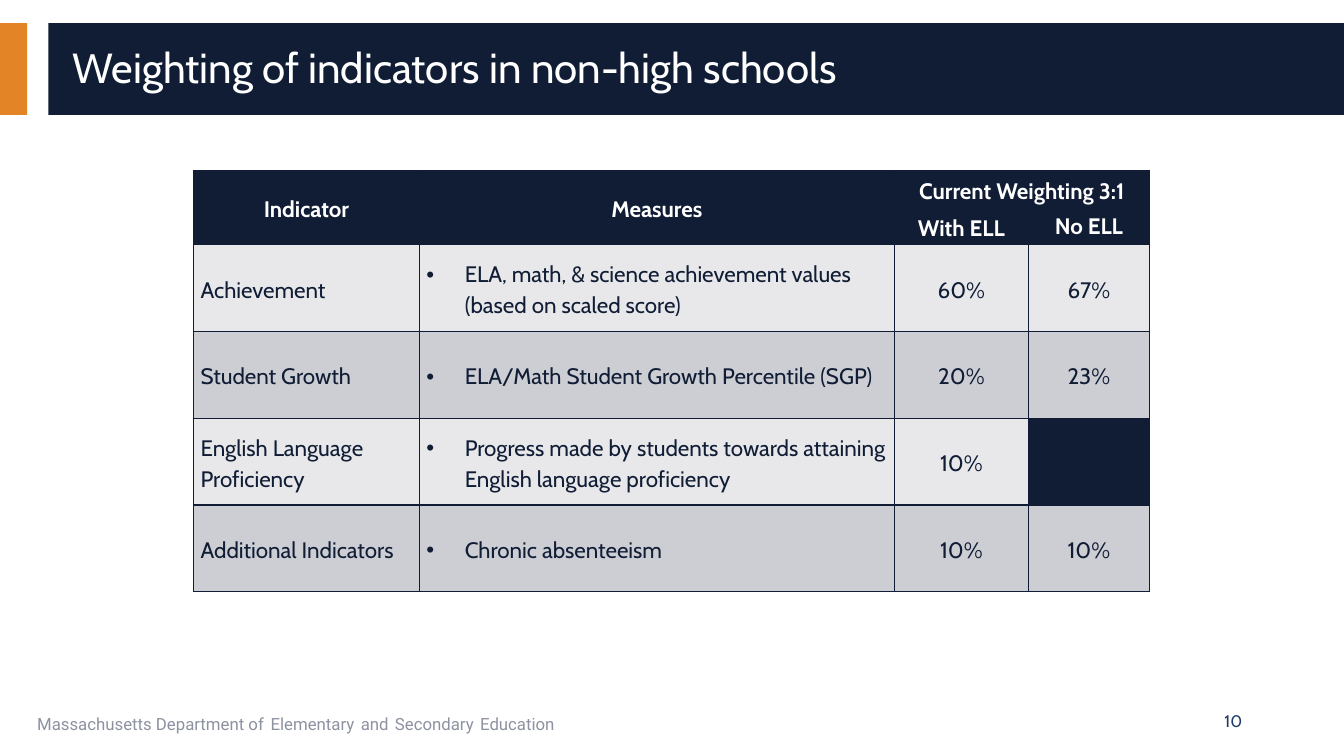
from typing import NamedTuple

import pptx
import pptx.dml.color
import pptx.enum.shapes
import pptx.enum.text
import pptx.oxml.ns
import pptx.util
from lxml import etree

Inches = pptx.util.Inches
Pt = pptx.util.Pt
RGBColor = pptx.dml.color.RGBColor
PP_ALIGN = pptx.enum.text.PP_ALIGN
MSO_ANCHOR = pptx.enum.text.MSO_ANCHOR
qn = pptx.oxml.ns.qn

NAVY = RGBColor(0x10, 0x1D, 0x35)
ORANGE = RGBColor(0xE3, 0x85, 0x26)
BLUE = RGBColor(0x20, 0x3B, 0x6A)
GRAY = RGBColor(0x8D, 0x92, 0xA1)
WHITE = RGBColor(0xFF, 0xFF, 0xFF)
BANDS = (RGBColor(0xE8, 0xE8, 0xEB), RGBColor(0xCD, 0xCE, 0xD4))

COLUMN_WIDTHS = (2.24, 4.71, 1.33, 1.2)
HEADER_HEIGHT, BODY_HEIGHT = 0.37, 0.86
HEADER_ROWS = 2


class Bar(NamedTuple):
    left: float
    width: float
    color: RGBColor


class Indicator(NamedTuple):
    name: str
    measure: str
    with_ell: str
    no_ell: str


BARS = (Bar(0, 0.27, ORANGE), Bar(0.48, 12.86, NAVY))
HEADERS = (
    ("Indicator", "Measures", "Current Weighting 3:1", ""),
    ("", "", "With ELL", "No ELL"),
)
INDICATORS = (
    Indicator("Achievement",
              "ELA, math, & science achievement values (based on scaled score)",
              "60%", "67%"),
    Indicator("Student Growth", "ELA/Math Student Growth Percentile (SGP)",
              "20%", "23%"),
    Indicator("English Language\nProficiency",
              "Progress made by students towards attaining English language proficiency",
              "10%", ""),
    Indicator("Additional Indicators", "Chronic absenteeism", "10%", "10%"),
)


def format_font(font, name: str, size: float, color: RGBColor, bold: bool = False) -> None:
    font.name = name
    font.size = Pt(size)
    font.bold = bold
    font.color.rgb = color


def add_bar(slide, bar: Bar) -> None:
    shape = slide.shapes.add_shape(
        pptx.enum.shapes.MSO_SHAPE.RECTANGLE,
        Inches(bar.left), Inches(0.23), Inches(bar.width), Inches(0.91))
    shape.shadow.inherit = False
    shape.fill.solid()
    shape.fill.fore_color.rgb = bar.color
    shape.line.fill.background()


def add_title(slide, text: str) -> None:
    title = slide.shapes.title
    title.left, title.top = Inches(0.62), Inches(0.32)
    title.width, title.height = Inches(12.44), Inches(0.74)
    title.text_frame.text = text
    title.text_frame.vertical_anchor = MSO_ANCHOR.MIDDLE
    paragraph = title.text_frame.paragraphs[0]
    paragraph.alignment = PP_ALIGN.LEFT
    paragraph.line_spacing = 0.9
    format_font(paragraph.runs[0].font, "Cabin", 30, WHITE)


def add_footer(slide) -> None:
    footer = slide.shapes.add_textbox(Inches(0.27), Inches(6.95), Inches(8.44), Inches(0.4))
    footer.text_frame.word_wrap = True
    paragraph = footer.text_frame.paragraphs[0]
    # The gaps between the later words are set larger than the words
    phrases = ("Massachusetts Department of", "Elementary", "and", "Secondary", "Education")
    for index, phrase in enumerate(phrases):
        if index:
            gap = paragraph.add_run()
            gap.text = " "
            format_font(gap.font, "Roboto", 18, BLUE)
        run = paragraph.add_run()
        run.text = phrase
        format_font(run.font, "Roboto", 12, GRAY)


def add_slide_number(slide, number: str) -> None:
    box = slide.shapes.add_textbox(Inches(9.42), Inches(6.95), Inches(3), Inches(0.4))
    box.text_frame.word_wrap = True
    box.text_frame.vertical_anchor = MSO_ANCHOR.MIDDLE
    box.text_frame.text = number
    paragraph = box.text_frame.paragraphs[0]
    paragraph.alignment = PP_ALIGN.RIGHT
    format_font(paragraph.runs[0].font, "Cabin", 12, BLUE)


def add_bullet(paragraph) -> None:
    properties = paragraph._p.get_or_add_pPr()
    properties.set("marL", str(Inches(0.38)))
    properties.set("indent", str(-Inches(0.38)))
    etree.SubElement(properties, qn("a:buFont"), typeface="Arial")
    etree.SubElement(properties, qn("a:buChar"), char="•")


def style_cell(cell, fill: RGBColor) -> None:
    properties = cell._tc.get_or_add_tcPr()
    for side in ("lnL", "lnR", "lnT", "lnB"):
        line = etree.SubElement(properties, qn(f"a:{side}"), w=str(Pt(1)))
        solid = etree.SubElement(line, qn("a:solidFill"))
        etree.SubElement(solid, qn("a:srgbClr"), val=str(NAVY))
    cell.fill.solid()
    cell.fill.fore_color.rgb = fill
    cell.vertical_anchor = MSO_ANCHOR.MIDDLE
    cell.margin_left = cell.margin_right = Inches(0.07)
    cell.margin_top = cell.margin_bottom = 0


def write_cell(cell, text: str, color: RGBColor, alignment: PP_ALIGN,
               bold: bool = False, bullet: bool = False, spacing: float = 1.15) -> None:
    cell.text_frame.text = text
    for paragraph in cell.text_frame.paragraphs:
        if bullet:
            add_bullet(paragraph)
        paragraph.alignment = alignment
        paragraph.line_spacing = spacing
        for run in paragraph.runs:
            format_font(run.font, "Cabin", 16, color, bold)


def add_weighting_table(slide) -> None:
    heights = [HEADER_HEIGHT] * HEADER_ROWS + [BODY_HEIGHT] * len(INDICATORS)
    table = slide.shapes.add_table(
        len(heights), len(COLUMN_WIDTHS), Inches(1.92), Inches(1.69),
        Inches(sum(COLUMN_WIDTHS)), Inches(sum(heights))).table
    for column, width in zip(table.columns, COLUMN_WIDTHS):
        column.width = Inches(width)
    for row, height in zip(table.rows, heights):
        row.height = Inches(height)

    # Header rows
    for row_index, labels in enumerate(HEADERS):
        for column_index, label in enumerate(labels):
            cell = table.cell(row_index, column_index)
            style_cell(cell, NAVY)
            if label:
                spacing = 1.0 if label == "No ELL" else 1.15
                write_cell(cell, label, WHITE, PP_ALIGN.CENTER, bold=True, spacing=spacing)
    for column_index in (0, 1):
        table.cell(0, column_index).merge(table.cell(1, column_index))
    table.cell(0, 2).merge(table.cell(0, 3))

    # Indicator rows; a weighting that does not apply is a dark cell
    for index, indicator in enumerate(INDICATORS):
        for column_index, text in enumerate(indicator):
            cell = table.cell(HEADER_ROWS + index, column_index)
            style_cell(cell, BANDS[index % 2] if text else NAVY)
            if text:
                alignment = PP_ALIGN.LEFT if column_index < 2 else PP_ALIGN.CENTER
                write_cell(cell, text, NAVY, alignment, bullet=column_index == 1)


def main() -> None:
    presentation = pptx.Presentation()
    presentation.slide_width = Inches(13.33)
    presentation.slide_height = Inches(7.5)
    slide = presentation.slides.add_slide(presentation.slide_layouts[5])

    # Bars go behind the title
    for bar in BARS:
        add_bar(slide, bar)
    title_element = slide.shapes.title._element
    title_element.getparent().append(title_element)

    add_title(slide, "Weighting of indicators in non-high schools")
    add_weighting_table(slide)
    add_footer(slide)
    add_slide_number(slide, "10")
    presentation.save("out.pptx")


if __name__ == "__main__":
    main()
